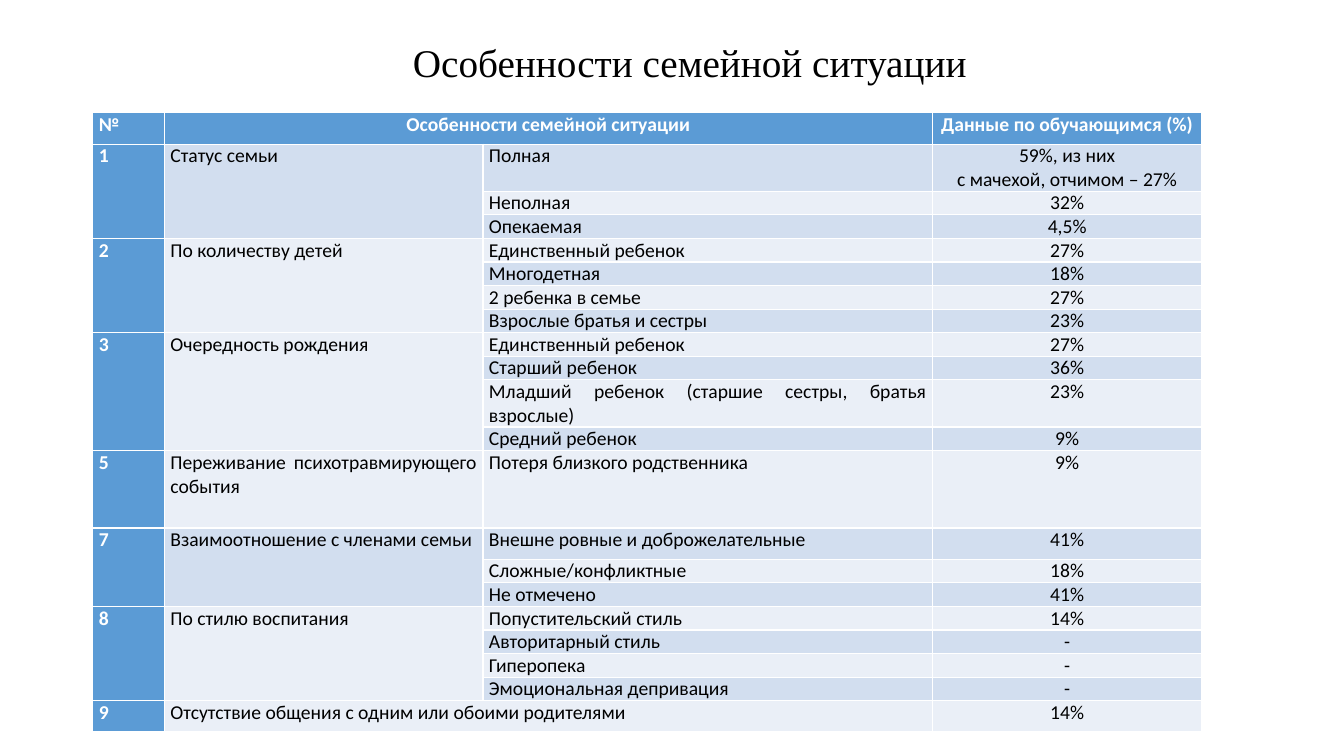
import pptx
import pptx.dml.color
import pptx.enum.text
import pptx.util

Inches = pptx.util.Inches
ALIGN = pptx.enum.text.PP_ALIGN
HEADER, BANDS = "5B9BD5", ("EAEFF7", "D2DEEF")


def color(value):
    return pptx.dml.color.RGBColor.from_string(value)


def write(frame, text, align, text_color, formats):
    frame.text = text
    for paragraph in frame.paragraphs:
        paragraph.alignment = align
        for run in paragraph.runs:
            run.font.color.rgb = color(text_color)
            for name, value in formats.items():
                setattr(run.font, name, value)


deck = pptx.Presentation()
deck.slide_width, deck.slide_height = Inches(13.33), Inches(7.5)
slide = deck.slides.add_slide(deck.slide_layouts[6])

# Title
title = slide.shapes.add_textbox(
    Inches(1.09), Inches(0.12), Inches(11.5), Inches(1.45)).text_frame
title_layout = {
    "word_wrap": True,
    "vertical_anchor": pptx.enum.text.MSO_ANCHOR.MIDDLE,
    "margin_bottom": Inches(0.45),
}
for name, value in title_layout.items():
    setattr(title, name, value)
write(title, "Особенности семейной ситуации", ALIGN.CENTER, "000000",
      {"size": pptx.util.Pt(28), "name": "Times New Roman"})
title.paragraphs[0].line_spacing = 0.9

# Survey data: number, feature, then (row height, option, share)
groups = [
    ("№", "Особенности семейной ситуации", [
        (0.31, "", "Данные по обучающимся (%)")]),
    ("1", "Статус семьи", [
        (0.46, "Полная", "59%, из них\nс мачехой, отчимом – 27%"),
        (0.15, "Неполная", "32%"),
        (0.15, "Опекаемая", "4,5%")]),
    ("2", "По количеству детей", [
        (0.15, "Единственный ребенок", "27%"),
        (0.15, "Многодетная", "18%"),
        (0.15, "2 ребенка в семье", "27%"),
        (0.15, "Взрослые братья и сестры", "23%")]),
    ("3", "Очередность рождения", [
        (0.15, "Единственный ребенок", "27%"),
        (0.15, "Старший ребенок", "36%"),
        (0.31, "Младший ребенок (старшие сестры, братья взрослые)", "23%"),
        (0.15, "Средний ребенок", "9%")]),
    ("5", "Переживание психотравмирующего события", [
        (0.77, "Потеря близкого родственника", "9%")]),
    ("7", "Взаимоотношение с членами семьи", [
        (0.31, "Внешне ровные и доброжелательные", "41%"),
        (0.15, "Сложные/конфликтные", "18%"),
        (0.15, "Не отмечено", "41%")]),
    ("8", "По стилю воспитания", [
        (0.15, "Попустительский стиль", "14%"),
        (0.15, "Авторитарный стиль", "-"),
        (0.15, "Гиперопека", "-"),
        (0.15, "Эмоциональная депривация", "-")]),
    ("9", "Отсутствие общения с одним или обоими родителями", [
        (0.31, "", "14%")]),
]
rows = []
for number, feature, options in groups:
    for index, (height, option, share) in enumerate(options):
        labels = ("", "") if index else (number, feature)
        rows.append((height, [*labels, option, share]))

# Table grid
survey = slide.shapes.add_table(
    len(rows), 4, Inches(0.92), Inches(1.12), Inches(11), Inches(6.12)).table
survey.first_col = True
for column, width in zip(survey.columns, (0.71, 3.16, 4.46, 2.67)):
    column.width = Inches(width)

# Cell text and fills
cell_margins = {"margin_left": Inches(0.06), "margin_right": Inches(0.06),
                "margin_top": 0, "margin_bottom": 0}
for r, (height, texts) in enumerate(rows):
    survey.rows[r].height = Inches(height)
    for c, text in enumerate(texts):
        cell = survey.cell(r, c)
        for name, value in cell_margins.items():
            setattr(cell, name, value)
        heading = r == 0 or c == 0
        cell.fill.solid()
        cell.fill.fore_color.rgb = color(HEADER if heading else BANDS[r % 2])
        centered = c == 3 or (r == 0 and c > 0)
        write(cell.text_frame, text, ALIGN.CENTER if centered else ALIGN.JUSTIFY,
              "FFFFFF" if heading else "000000",
              {"size": pptx.util.Pt(14), "name": "Calibri", "bold": heading})

# Merged cells
first = 0
for number, feature, options in groups:
    last = first + len(options) - 1
    if last > first:
        for c in (0, 1):
            survey.cell(first, c).merge(survey.cell(last, c))
    elif not options[0][1]:
        survey.cell(first, 1).merge(survey.cell(first, 2))
    first = last + 1

deck.save("out.pptx")
